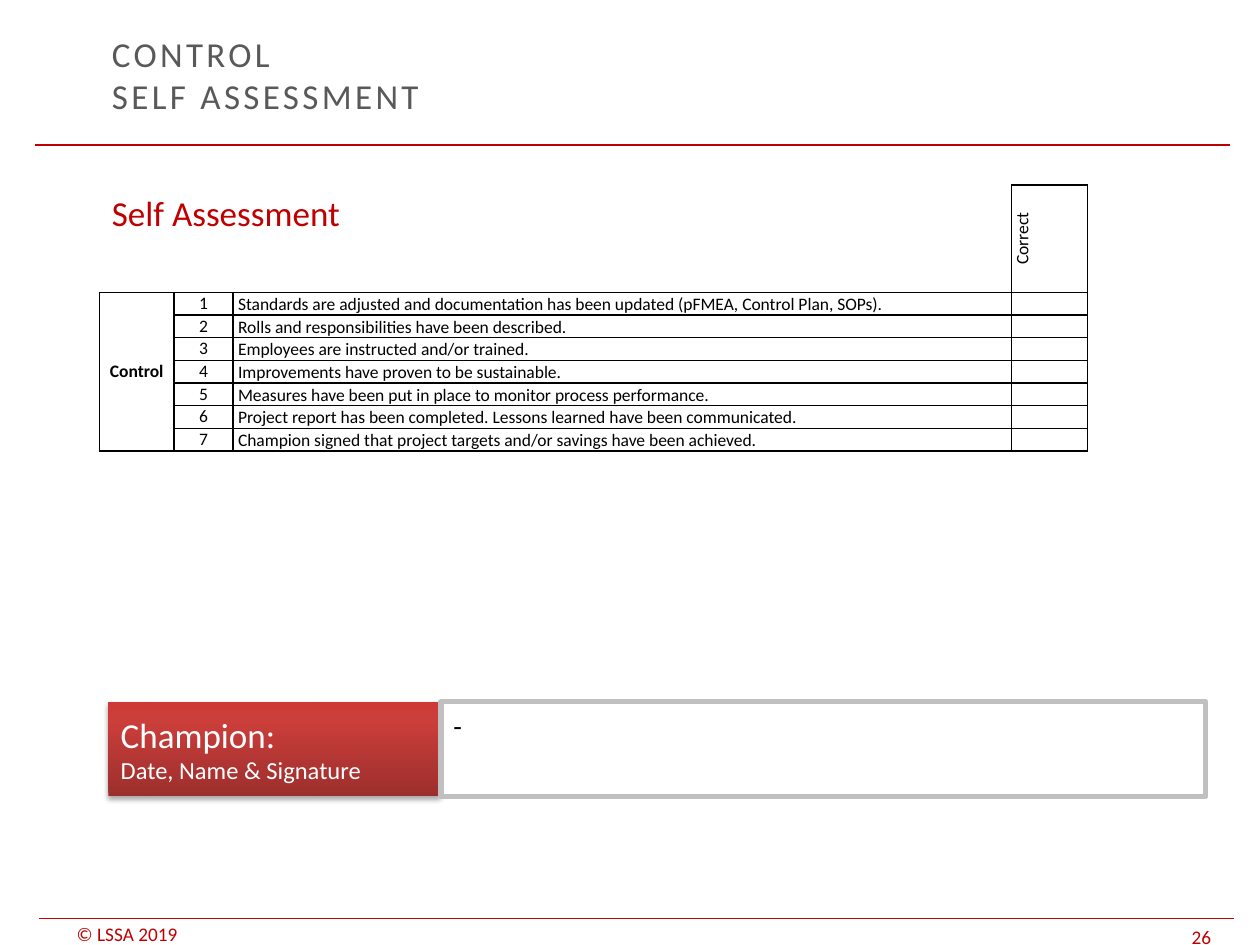
from lxml import etree
from pptx import Presentation
from pptx.dml.color import RGBColor
from pptx.enum import shapes, text
from pptx.oxml import parse_xml
from pptx.oxml.ns import nsdecls, qn
from pptx.util import Inches, Pt

RED, GRAY, BLACK, WHITE = "C00000", "595959", "000000", "FFFFFF"
MID, LOW = text.MSO_ANCHOR.MIDDLE, text.MSO_ANCHOR.BOTTOM
TOP = text.MSO_ANCHOR.TOP
CENTER = text.PP_ALIGN.CENTER

CHECKS = [
    "Standards are adjusted and documentation has been updated (pFMEA, Control Plan, SOPs).",
    "Rolls and responsibilities have been described.",
    "Employees are instructed and/or trained.",
    "Improvements have proven to be sustainable.",
    "Measures have been put in place to monitor process performance.",
    "Project report has been completed. Lessons learned have been communicated.",
    "Champion signed that project targets and/or savings have been achieved.",
]


def color(code):
    return RGBColor.from_string(code)


def style(para, size, code, bold=False):
    font = para.font
    font.name, font.size, font.bold = "Calibri", Pt(size), bold
    font.color.rgb = color(code)


def write(frame, lines, code, anchor=TOP):
    """Fill a frame with (words, size) lines, one paragraph each."""
    frame.word_wrap = True
    frame.vertical_anchor = anchor
    for i, (words, size) in enumerate(lines):
        para = frame.add_paragraph() if i else frame.paragraphs[0]
        para.text = words
        para.alignment = text.PP_ALIGN.LEFT
        style(para, size, code)


def label(slide, box, words, size, code, anchor=TOP):
    frame = slide.shapes.add_textbox(*map(Inches, box)).text_frame
    write(frame, [(words, size)], code, anchor)
    return frame


def footer(slide, box, words):
    frame = label(slide, box, words, 11, RED, LOW)
    frame.word_wrap = False
    frame.margin_top = frame.margin_bottom = 0


def rule(slide, left, top):
    line = slide.shapes.add_connector(
        shapes.MSO_CONNECTOR.STRAIGHT,
        Inches(left), Inches(top), Inches(left + 9.48), Inches(top))
    line.line.color.rgb = color(RED)
    line.line.width = Pt(0.75)
    etree.SubElement(line._element.spPr, qn("a:effectLst"))


def panel(slide, box, lines, code, anchor=TOP):
    shape = slide.shapes.add_shape(
        shapes.MSO_SHAPE.RECTANGLE, *map(Inches, box))
    shape.shadow.inherit = False
    shape.fill.solid()
    shape.fill.fore_color.rgb = color(WHITE)
    write(shape.text_frame, lines, code, anchor)
    return shape


def shade(shape):
    """Give a panel its red gradient and soft shadow."""
    props = shape._element.spPr
    stops = "".join(
        f'<a:gs pos="{pos}000"><a:srgbClr val="{code}"/></a:gs>'
        for pos, code in [(0, "9C2F2D"), (80, "CB3E3A"), (100, "CE3B37")])
    grad = parse_xml(
        f'<a:gradFill {nsdecls("a")} rotWithShape="1"><a:gsLst>{stops}</a:gsLst>'
        '<a:lin ang="16200000" scaled="0"/></a:gradFill>')
    props.replace(props.find(qn("a:solidFill")), grad)
    props.find(qn("a:effectLst")).append(parse_xml(
        f'<a:outerShdw {nsdecls("a")} blurRad="{Pt(3.1)}" dist="{Pt(1.8)}" '
        'dir="5400000" rotWithShape="0"><a:srgbClr val="000000">'
        '<a:alpha val="35000"/></a:srgbClr></a:outerShdw>'))


def border(cell, sides):
    props = cell._tc.get_or_add_tcPr()
    for i, side in enumerate(sides):
        props.insert(i, parse_xml(
            f'<a:ln{side} {nsdecls("a")} w="{Pt(1)}"><a:solidFill>'
            f'<a:srgbClr val="{BLACK}"/></a:solidFill></a:ln{side}>'))


def put(cell, words, bold=False, align=CENTER):
    para = cell.text_frame.paragraphs[0]
    para.text = words
    para.alignment = align
    style(para, 10, BLACK, bold)


def grid(slide):
    rows = len(CHECKS) + 1
    table = slide.shapes.add_table(
        rows, 4, Inches(0.79), Inches(1.47), Inches(7.84), Inches(2.1)).table
    table.first_row = table.horz_banding = False
    for col, width in zip(table.columns, [0.59, 0.47, 6.18, 0.6]):
        col.width = Inches(width)
    for r, row in enumerate(table.rows):
        row.height = Inches(0.18 if r else 0.85)
        for c, cell in enumerate(row.cells):
            cell.fill.background()
            cell.margin_left = cell.margin_right = 0
            cell.margin_top = cell.margin_bottom = 0
            cell.vertical_anchor = MID
            border(cell, "RB" if r == 0 and c < 3 else "LRTB")
            para = cell.text_frame.paragraphs[0]
            etree.SubElement(para._p, qn("a:endParaRPr"), sz="1000")

    table.cell(0, 0).merge(table.cell(0, 2))
    table.cell(1, 0).merge(table.cell(rows - 1, 0))
    head = table.cell(0, 3)
    put(head, "Correct")
    head._tc.get_or_add_tcPr().set("vert", "vert270")
    put(table.cell(1, 0), "Control", True)
    for r, check in enumerate(CHECKS, 1):
        put(table.cell(r, 1), str(r))
        cell = table.cell(r, 2)
        put(cell, check, align=text.PP_ALIGN.LEFT)
        cell.margin_left, cell.margin_top = Inches(0.04), Inches(0.01)
        cell.vertical_anchor = LOW


def main():
    deck = Presentation()
    deck.slide_width, deck.slide_height = Inches(10), Inches(7.5)
    slide = deck.slides.add_slide(deck.slide_layouts[6])

    footer(slide, (0.51, 7.32, 1.42, 0.18), "© LSSA 2019")
    footer(slide, (9.36, 7.31, 0.64, 0.22), "26")
    rule(slide, 0.28, 1.15)
    rule(slide, 0.31, 7.29)

    title = label(slide, (0.79, 0.26, 7.09, 0.66),
                  "CONTROL\vSELF ASSESSMENT", 20, GRAY, MID)
    for run in title.paragraphs[0].runs:
        run._r.get_or_add_rPr().set("spc", "190")
    label(slide, (0.79, 1.47, 8.66, 5.51), "Self Assessment", 20, RED)
    grid(slide)

    sign = panel(slide, (0.86, 5.57, 2.63, 0.75),
                 [("Champion:", 20), ("Date, Name & Signature", 14)], WHITE, MID)
    sign.line.fill.background()
    shade(sign)
    field = panel(slide, (3.5, 5.57, 6.07, 0.75), [("-", 16)], BLACK)
    field.line.color.rgb = color("C0C0C0")
    field.line.width = Pt(3)

    deck.save("out.pptx")


if __name__ == "__main__":
    main()
